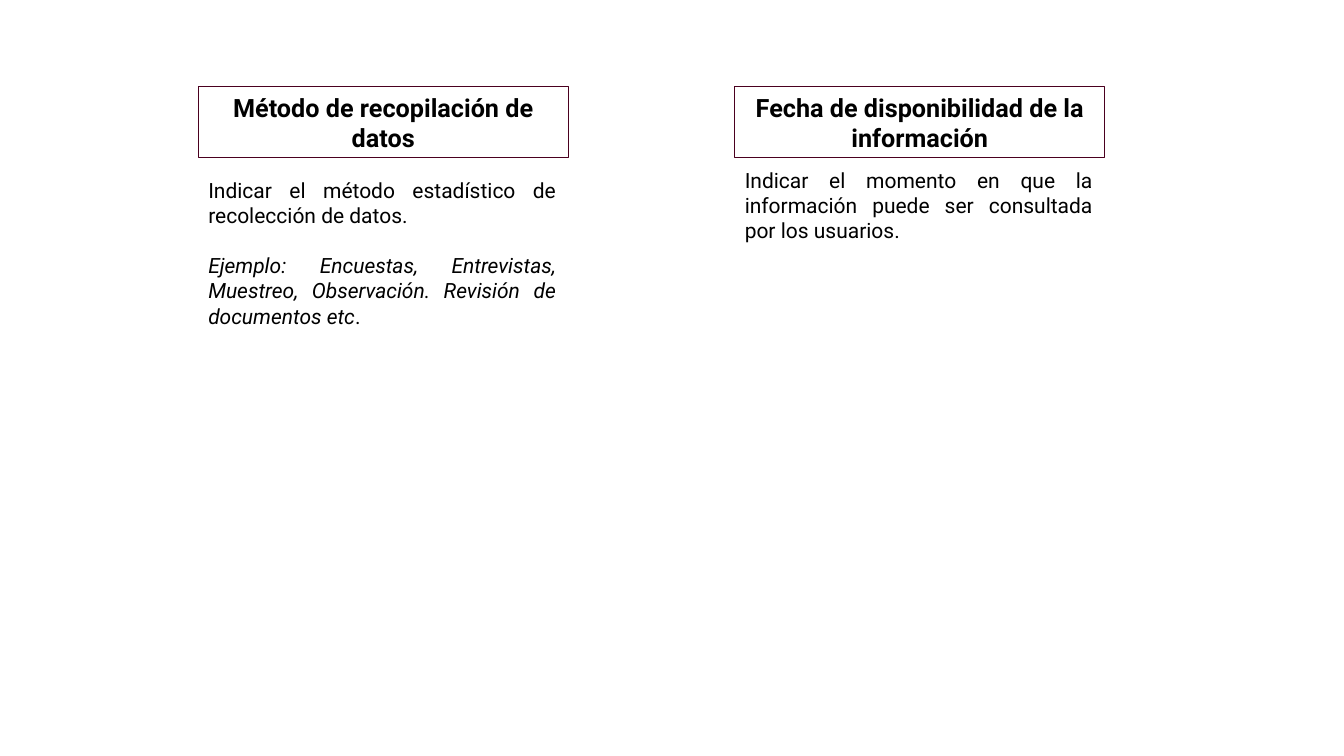
import pptx
import pptx.util
import pptx.dml.color
import pptx.enum.shapes
import pptx.enum.text

Cm = pptx.util.Cm
Pt = pptx.util.Pt
ALIGN = pptx.enum.text.PP_ALIGN
BLACK = pptx.dml.color.RGBColor(0x00, 0x00, 0x00)
MAROON = pptx.dml.color.RGBColor(0x4A, 0x00, 0x1F)

HEADING_FORMAT = {"name": "Roboto", "size": Pt(18), "bold": True}
BODY_FORMAT = {"name": "Roboto", "size": Pt(15), "bold": False}

COLUMN_TOP = 2.18
COLUMN_WIDTH = 9.32
HEADING_HEIGHT = 1.8

COLUMNS = [
    {
        "left": 5.0,
        "heading": "Método de recopilación de datos",
        "gap": 0.36,
        "body_height": 4.11,
        "body": [
            [("Indicar el método estadístico de recolección de datos.", False)],
            [
                ("Ejemplo: Encuestas, Entrevistas, Muestreo, Observación. "
                 "Revisión de documentos etc", True),
                (".", False),
            ],
        ],
    },
    {
        "left": 18.52,
        "heading": "Fecha de disponibilidad de la información",
        "gap": 0.11,
        "body_height": 2.18,
        "body": [
            [("Indicar el momento en que la información puede ser consultada "
              "por los usuarios.", False)],
        ],
    },
]


def add_text(paragraph, text, font_format, italic=False):
    run = paragraph.add_run()
    run.text = text
    for attribute, value in font_format.items():
        setattr(run.font, attribute, value)
    run.font.italic = italic
    run.font.color.rgb = BLACK


def add_heading(slide, left, top, width, height, text):
    heading = slide.shapes.add_shape(
        pptx.enum.shapes.MSO_SHAPE.RECTANGLE, Cm(left), Cm(top), Cm(width), Cm(height))
    heading.shadow.inherit = False
    heading.fill.background()
    heading.line.color.rgb = MAROON
    heading.line.width = Pt(0.75)
    heading.text_frame.word_wrap = True
    paragraph = heading.text_frame.paragraphs[0]
    paragraph.alignment = ALIGN.CENTER
    add_text(paragraph, text, HEADING_FORMAT)


def add_body(slide, left, top, width, height, paragraphs):
    body = slide.shapes.add_textbox(Cm(left), Cm(top), Cm(width), Cm(height))
    frame = body.text_frame
    frame.word_wrap = True
    for index, pieces in enumerate(paragraphs):
        paragraph = frame.add_paragraph() if index else frame.paragraphs[0]
        paragraph.alignment = ALIGN.JUSTIFY
        if index:
            paragraph.space_before = Pt(18)
        for text, italic in pieces:
            add_text(paragraph, text, BODY_FORMAT, italic)


def add_column(slide, left, top, width, column):
    add_heading(slide, left, top, width, HEADING_HEIGHT, column["heading"])
    body_top = top + HEADING_HEIGHT + column["gap"]
    add_body(slide, left, body_top, width - 0.05, column["body_height"], column["body"])


def main():
    presentation = pptx.Presentation()
    presentation.slide_width = Cm(33.87)
    presentation.slide_height = Cm(19.05)
    slide = presentation.slides.add_slide(presentation.slide_layouts[6])
    for column in COLUMNS:
        add_column(slide, column["left"], COLUMN_TOP, COLUMN_WIDTH, column)
    presentation.save("out.pptx")


if __name__ == "__main__":
    main()
